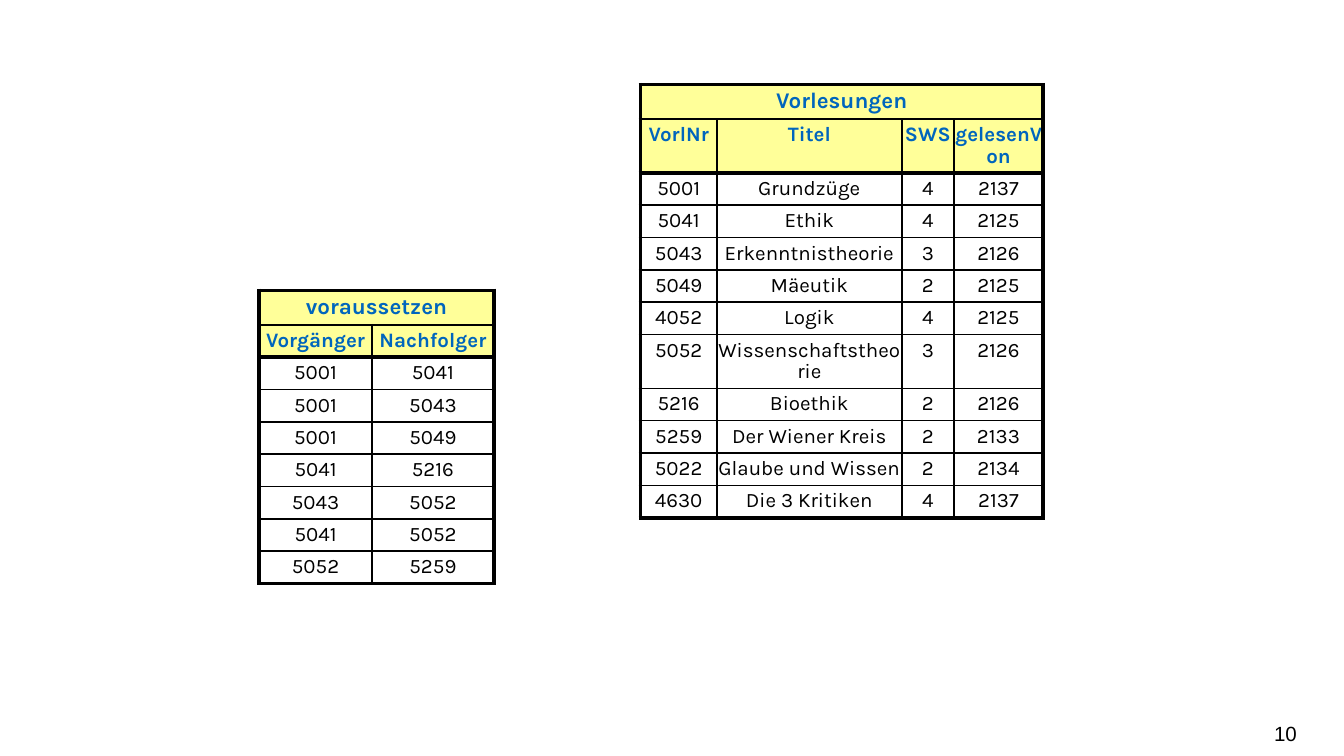
import pptx
import pptx.util
import pptx.dml.color
import pptx.enum.text
import pptx.oxml.ns
import lxml.etree

Pt = pptx.util.Pt
ALIGN = pptx.enum.text.PP_ALIGN
ANCHOR = pptx.enum.text.MSO_ANCHOR

COLORS = {"heading": "0065BD", "text": "000000", "header": "FFFF99", "border": "000000"}
THIN, THICK = 1, 2.25
TITLE_HEIGHT, ROW_HEIGHT = 18, 16.6

RELATIONS = [
    {
        "title": "Vorlesungen",
        "left": 343.1, "top": 45.3,
        "widths": [41, 99, 28, 47.7],
        "header_height": 28,
        "header": ["VorlNr", "Titel", "SWS", "gelesenVon"],
        "rows": [
            ["5001", "Grundzüge", "4", "2137"],
            ["5041", "Ethik", "4", "2125"],
            ["5043", "Erkenntnistheorie", "3", "2126"],
            ["5049", "Mäeutik", "2", "2125"],
            ["4052", "Logik", "4", "2125"],
            ["5052", "Wissenschaftstheorie", "3", "2126"],
            ["5216", "Bioethik", "2", "2126"],
            ["5259", "Der Wiener Kreis", "2", "2133"],
            ["5022", "Glaube und Wissen", "2", "2134"],
            ["4630", "Die 3 Kritiken", "4", "2137"],
        ],
    },
    {
        "title": "voraussetzen",
        "left": 138.8, "top": 155.6,
        "widths": [60.5, 65.3],
        "header_height": ROW_HEIGHT,
        "header": ["Vorgänger", "Nachfolger"],
        "rows": [
            ["5001", "5041"],
            ["5001", "5043"],
            ["5001", "5049"],
            ["5041", "5216"],
            ["5043", "5052"],
            ["5041", "5052"],
            ["5052", "5259"],
        ],
    },
]
PAGE_NUMBER = "10"


def rgb(name):
    return pptx.dml.color.RGBColor.from_string(COLORS[name])


def style_paragraph(paragraph, font, size, color, bold, align):
    paragraph.alignment = align
    paragraph.font.name = font
    paragraph.font.size = Pt(size)
    paragraph.font.bold = bold
    paragraph.font.color.rgb = rgb(color)


def set_borders(cell, thick_sides):
    qn = pptx.oxml.ns.qn
    properties = cell._tc.get_or_add_tcPr()
    for side in "LRTB":
        width = THICK if side in thick_sides else THIN
        line = lxml.etree.SubElement(properties, qn(f"a:ln{side}"), w=str(int(Pt(width))))
        fill = lxml.etree.SubElement(line, qn("a:solidFill"))
        lxml.etree.SubElement(fill, qn("a:srgbClr"), val=COLORS["border"])


def fill_cell(cell, text, row, thick_sides):
    is_header = row < 2
    set_borders(cell, thick_sides)
    if is_header:
        cell.fill.solid()
        cell.fill.fore_color.rgb = rgb("header")
    else:
        cell.fill.background()
    cell.margin_left = cell.margin_right = 0
    cell.margin_top = cell.margin_bottom = Pt(2.88)
    cell.text = text
    paragraph = cell.text_frame.paragraphs[0]
    paragraph.line_spacing = 0.9
    style_paragraph(paragraph, "Karla", 12 if row == 0 else 11,
                    "heading" if is_header else "text", is_header, ALIGN.CENTER)


def add_relation(slide, relation):
    widths = relation["widths"]
    title_row = [relation["title"]] + [""] * (len(widths) - 1)
    lines = [title_row, relation["header"]] + relation["rows"]
    heights = [TITLE_HEIGHT, relation["header_height"]] + [ROW_HEIGHT] * len(relation["rows"])
    last_row, last_column = len(lines) - 1, len(widths) - 1

    table = slide.shapes.add_table(
        len(lines), len(widths), Pt(relation["left"]), Pt(relation["top"]),
        Pt(sum(widths)), Pt(sum(heights))).table
    table.first_row = table.horz_banding = False
    for column, width in zip(table.columns, widths):
        column.width = Pt(width)
    for row, height in zip(table.rows, heights):
        row.height = Pt(height)
    table.cell(0, 0).merge(table.cell(0, last_column))

    for r, line in enumerate(lines):
        for c, text in enumerate(line):
            thick = {"L": c == 0, "R": r == 0 or c == last_column,
                     "T": r in (0, 2), "B": r in (1, last_row)}
            fill_cell(table.cell(r, c), text, r, [side for side in thick if thick[side]])


def add_page_number(slide):
    frame = slide.shapes.add_textbox(Pt(533.5), Pt(382.3), Pt(161.3), Pt(21.6)).text_frame
    frame.word_wrap = True
    frame.vertical_anchor = ANCHOR.MIDDLE
    frame.margin_left = frame.margin_right = 0
    frame.text = PAGE_NUMBER
    style_paragraph(frame.paragraphs[0], "Arial", 11, "text", False, ALIGN.RIGHT)


def main():
    deck = pptx.Presentation()
    deck.slide_width, deck.slide_height = Pt(720), Pt(405)
    slide = deck.slides.add_slide(deck.slide_layouts[6])
    for relation in RELATIONS:
        add_relation(slide, relation)
    add_page_number(slide)
    deck.save("out.pptx")


if __name__ == "__main__":
    main()
